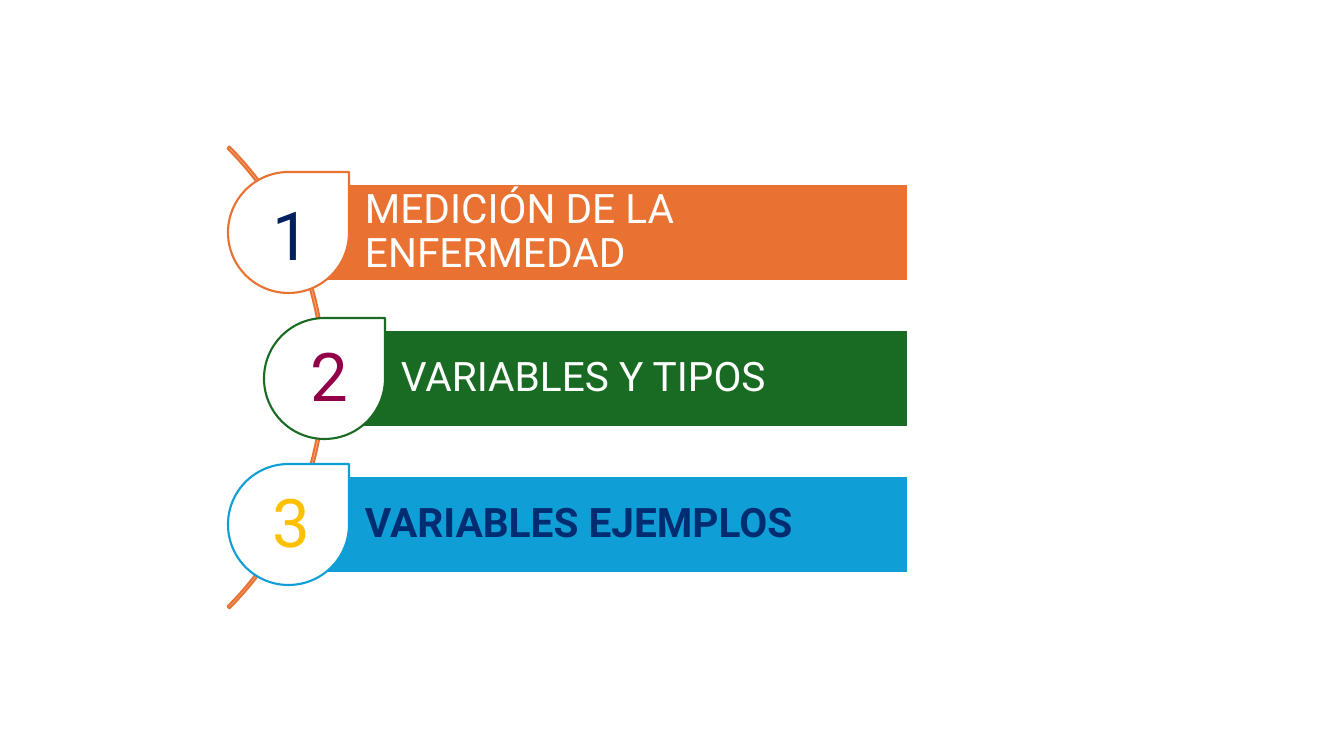
from dataclasses import dataclass

import pptx
import pptx.dml.color
import pptx.enum.shapes
import pptx.enum.text
import pptx.shapes.autoshape
import pptx.slide
import pptx.text.text
import pptx.util

RGBColor = pptx.dml.color.RGBColor
Shape = pptx.shapes.autoshape.Shape
MSO_SHAPE = pptx.enum.shapes.MSO_SHAPE
MSO_ANCHOR = pptx.enum.text.MSO_ANCHOR
MSO_AUTO_SIZE = pptx.enum.text.MSO_AUTO_SIZE
PP_ALIGN = pptx.enum.text.PP_ALIGN

WHITE = RGBColor(0xFF, 0xFF, 0xFF)
ORANGE = RGBColor(0xE9, 0x71, 0x32)
GREEN = RGBColor(0x19, 0x6B, 0x24)
BLUE = RGBColor(0x0F, 0x9E, 0xD5)
NAVY = RGBColor(0x00, 0x2D, 0x72)
DARK_NAVY = RGBColor(0x00, 0x20, 0x60)
PLUM = RGBColor(0x91, 0x00, 0x48)
GOLD = RGBColor(0xFF, 0xC0, 0x00)

FONT_NAME = "Roboto"
PX_PER_INCH = 100.8
SLIDE_WIDTH, SLIDE_HEIGHT = 1344, 756

FIRST_BAR_TOP, ROW_PITCH = 184, 146
BAR_RIGHT, BAR_HEIGHT = 908, 97
BAR_TEXT_INSET, BAR_PADDING = 77, 8
DROP_SIZE, DROP_SHIFT_LEFT, DROP_SHIFT_UP = 121, 60, 12
NUMBER_WIDTH, NUMBER_HEIGHT = 73, 92
ARC_LEFT, ARC_TOP, ARC_SIZE = -328, 51, 653
ARC_ADJUSTMENTS = (189, 27, 0.004)


@dataclass(frozen=True)
class Topic:
    title: str
    color: RGBColor
    bar_left: int
    number_left: int
    number_top: int
    number_color: RGBColor
    title_color: RGBColor = WHITE
    bold: bool = False


TOPICS = (
    Topic("MEDICIÓN DE LA ENFERMEDAD", ORANGE, 288, 255, 188, DARK_NAVY),
    Topic("VARIABLES Y TIPOS", GREEN, 324, 293, 329, PLUM),
    Topic("VARIABLES EJEMPLOS", BLUE, 288, 255, 475, GOLD, NAVY, True),
)


def px(length: int) -> pptx.util.Emu:
    return pptx.util.Inches(length / PX_PER_INCH)


def add_outlined_shape(slide: pptx.slide.Slide, kind: MSO_SHAPE, left: int, top: int,
                       width: int, height: int, line_color: RGBColor) -> Shape:
    shape = slide.shapes.add_shape(kind, px(left), px(top), px(width), px(height))
    shape.shadow.inherit = False
    shape.line.color.rgb = line_color
    shape.line.width = pptx.util.Pt(1.5)
    return shape


def fill_solid(shape: Shape, color: RGBColor) -> None:
    shape.fill.solid()
    shape.fill.fore_color.rgb = color


def write_paragraph(frame: pptx.text.text.TextFrame, text: str, size: int,
                    color: RGBColor, alignment: PP_ALIGN, bold: bool = False) -> None:
    frame.word_wrap = True
    paragraph = frame.paragraphs[0]
    paragraph.text = text
    paragraph.alignment = alignment
    paragraph.font.name = FONT_NAME
    paragraph.font.size = pptx.util.Pt(size)
    paragraph.font.bold = bold
    paragraph.font.color.rgb = color


def add_arc(slide: pptx.slide.Slide) -> None:
    arc = add_outlined_shape(slide, MSO_SHAPE.BLOCK_ARC, ARC_LEFT, ARC_TOP,
                             ARC_SIZE, ARC_SIZE, ORANGE)
    arc.fill.background()
    for index, value in enumerate(ARC_ADJUSTMENTS):
        arc.adjustments[index] = value


def add_bar(slide: pptx.slide.Slide, topic: Topic, top: int) -> None:
    bar = add_outlined_shape(slide, MSO_SHAPE.RECTANGLE, topic.bar_left, top,
                             BAR_RIGHT - topic.bar_left, BAR_HEIGHT, WHITE)
    fill_solid(bar, topic.color)
    frame = bar.text_frame
    frame.vertical_anchor = MSO_ANCHOR.MIDDLE
    frame.margin_left = px(BAR_TEXT_INSET)
    frame.margin_top = frame.margin_right = frame.margin_bottom = px(BAR_PADDING)
    write_paragraph(frame, topic.title, 29, topic.title_color, PP_ALIGN.LEFT, topic.bold)
    frame.paragraphs[0].line_spacing = 0.9


def add_drop(slide: pptx.slide.Slide, topic: Topic, bar_top: int) -> None:
    drop = add_outlined_shape(slide, MSO_SHAPE.TEAR, topic.bar_left - DROP_SHIFT_LEFT,
                              bar_top - DROP_SHIFT_UP, DROP_SIZE, DROP_SIZE, topic.color)
    fill_solid(drop, WHITE)


def add_number(slide: pptx.slide.Slide, topic: Topic, number: int) -> None:
    box = slide.shapes.add_textbox(px(topic.number_left), px(topic.number_top),
                                   px(NUMBER_WIDTH), px(NUMBER_HEIGHT))
    box.text_frame.auto_size = MSO_AUTO_SIZE.SHAPE_TO_FIT_TEXT
    write_paragraph(box.text_frame, str(number), 48, topic.number_color, PP_ALIGN.CENTER)


def main() -> None:
    presentation = pptx.Presentation()
    presentation.slide_width = px(SLIDE_WIDTH)
    presentation.slide_height = px(SLIDE_HEIGHT)
    slide = presentation.slides.add_slide(presentation.slide_layouts[6])

    add_arc(slide)
    for row, topic in enumerate(TOPICS):
        bar_top = FIRST_BAR_TOP + row * ROW_PITCH
        add_bar(slide, topic, bar_top)
        add_drop(slide, topic, bar_top)
    for number, topic in enumerate(TOPICS, start=1):
        add_number(slide, topic, number)

    presentation.save("out.pptx")


if __name__ == "__main__":
    main()
